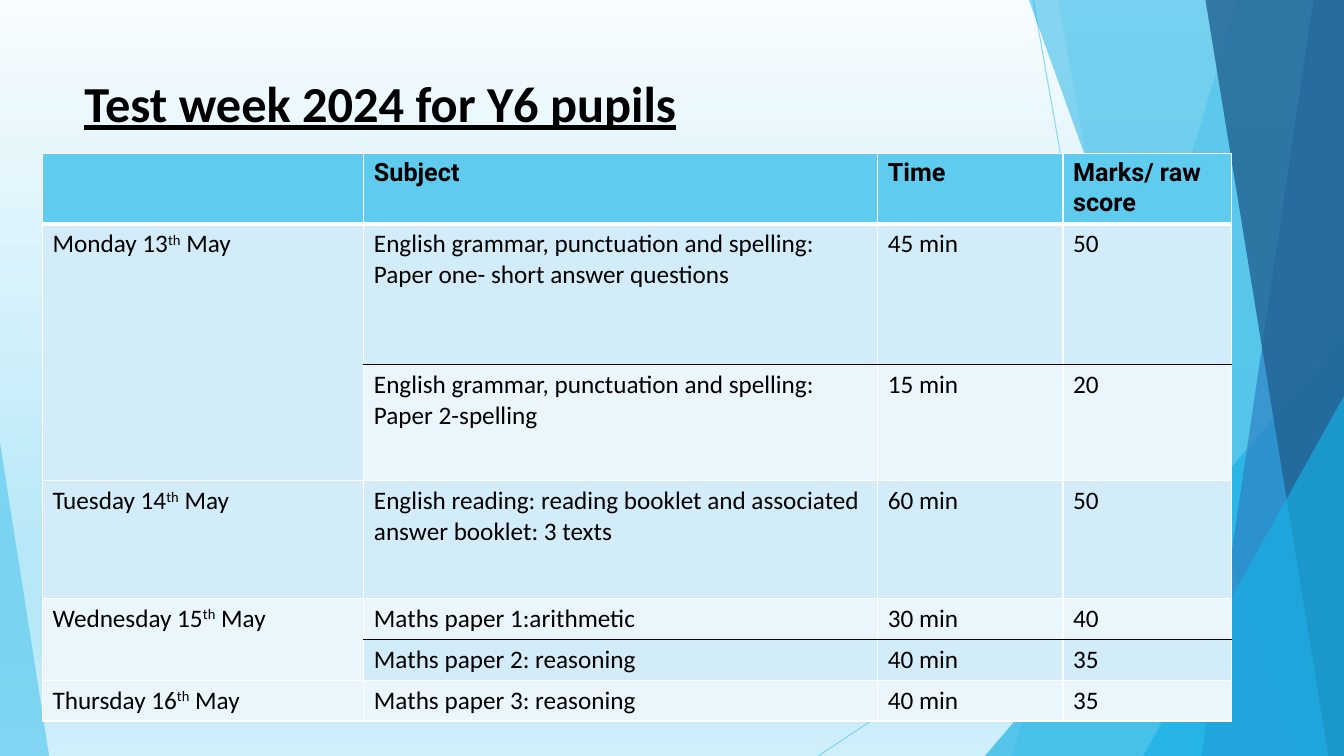
from dataclasses import dataclass
from copy import deepcopy

from lxml import etree
from pptx import Presentation
from pptx import util as u
from pptx.dml.color import RGBColor
from pptx.enum import shapes, text
from pptx.oxml import ns

BLACK = RGBColor(0x00, 0x00, 0x00)
WHITE = RGBColor(0xFF, 0xFF, 0xFF)
SKY = RGBColor(0x5F, 0xCB, 0xEF)
CYAN = RGBColor(0x17, 0xB0, 0xE4)
BLUE = RGBColor(0x2E, 0x83, 0xC3)
NAVY = RGBColor(0x22, 0x62, 0x92)
BAND_DARK = RGBColor(0xD2, 0xEC, 0xF9)
BAND_LIGHT = RGBColor(0xEA, 0xF6, 0xFC)
BACKDROP = [
    (0, RGBColor(0xF7, 0xFC, 0xFE)),
    (0.74, RGBColor(0xB7, 0xE8, 0xF8)),
    (0.83, RGBColor(0xB7, 0xE8, 0xF8)),
    (1, RGBColor(0xCF, 0xEF, 0xFA)),
]
WIDTH, HEIGHT = 33.87, 19.05  # slide size in cm


@dataclass
class Ray:
    start: tuple[float, float]
    end: tuple[float, float]


@dataclass
class Shard:
    """A band from its slanted left edge to the right side of the slide."""
    top_x: float
    bottom_x: float
    color: RGBColor
    opacity: int


@dataclass
class Corner:
    """A right-angled triangle standing on the bottom of the slide."""
    left: float
    top: float
    width: float
    apex: float
    color: RGBColor
    opacity: int


@dataclass
class Paper:
    day: str
    subject: str
    time: str
    marks: str


RAYS = [Ray((26.04, 0), (29.41, HEIGHT)), Ray((WIDTH, 10.24), (20.62, HEIGHT))]
DECOR = [
    Shard(31.19, 25.5, SKY, 36),
    Shard(26.67, 30.05, SKY, 20),
    Corner(24.82, 8.46, 9.05, 1, CYAN, 66),
    Shard(25.93, 32.79, CYAN, 50),
    Shard(33.1, 30.28, BLUE, 70),
    Shard(30.38, 33.48, NAVY, 80),
    Corner(28.81, 9.98, 5.06, 1, CYAN, 66),
    Corner(0, 11.15, 1.24, 0, SKY, 70),
]

# Text between carets is superscript; an empty day continues the one above
HEADER = Paper("", "Subject", "Time", "Marks/ raw score")
GRAMMAR = "English grammar, punctuation and spelling: "
PAPERS = [
    Paper("Monday 13^th^ May", GRAMMAR + "Paper one- short answer questions", "45 min", "50"),
    Paper("", GRAMMAR + "Paper 2-spelling", "15 min", "20"),
    Paper("Tuesday 14^th^ May",
          "English reading: reading booklet and associated answer booklet: 3 texts",
          "60 min", "50"),
    Paper("Wednesday 15^th^ May", "Maths paper 1:arithmetic", "30 min", "40"),
    Paper("", "Maths paper 2: reasoning", "40 min", "35"),
    Paper("Thursday 16^th^ May", "Maths paper 3: reasoning", "40 min", "35"),
]
COLUMN_WIDTHS = [8.1, 12.95, 4.67, 4.24]
ROW_HEIGHTS = [1.74, 3.54, 2.93, 2.97, 1.03, 1.03, 1.03]


def set_opacity(element, percent: int) -> None:
    color = element.find(".//" + ns.qn("a:srgbClr"))
    etree.SubElement(color, ns.qn("a:alpha"), val=str(percent * 1000))


def write(frame, words: str, *, size: float = 18, font: str = "Calibri",
          bold: bool = False, underline: bool = False) -> None:
    paragraph = frame.paragraphs[0]
    paragraph.alignment = text.PP_ALIGN.LEFT
    for index, part in enumerate(words.split("^")):
        run = paragraph.add_run()
        run.text = part
        run.font.size = u.Pt(size)
        run.font.name = font
        run.font.bold = bold
        run.font.underline = underline
        run.font.color.rgb = BLACK
        if index % 2:
            run.font._element.set("baseline", "30000")


def paint_backdrop(slide) -> None:
    fill = slide.background.fill
    fill.gradient()
    fill.gradient_angle = 270
    stop_list = slide._element.find(".//" + ns.qn("a:gsLst"))
    while len(stop_list) < len(BACKDROP):
        stop_list.append(deepcopy(stop_list[0]))
    for stop, (position, color) in zip(fill.gradient_stops, BACKDROP):
        stop.position = position
        stop.color.rgb = color


def draw_ray(slide, ray: Ray) -> None:
    line = slide.shapes.add_connector(
        shapes.MSO_CONNECTOR.STRAIGHT, *map(u.Cm, ray.start + ray.end))
    line.line.color.rgb = SKY
    line.line.width = u.Pt(0.75)
    properties = line._element.spPr
    set_opacity(properties, 70)
    etree.SubElement(properties, ns.qn("a:effectLst"))


def draw_decor(slide, piece: Shard | Corner) -> None:
    if isinstance(piece, Shard):
        builder = slide.shapes.build_freeform(u.Cm(piece.top_x), 0)
        corners = [(WIDTH, 0), (WIDTH, HEIGHT), (piece.bottom_x, HEIGHT)]
        builder.add_line_segments([(u.Cm(x), u.Cm(y)) for x, y in corners])
        shape = builder.convert_to_shape()
    else:
        shape = slide.shapes.add_shape(
            shapes.MSO_SHAPE.ISOSCELES_TRIANGLE, u.Cm(piece.left), u.Cm(piece.top),
            u.Cm(piece.width), u.Cm(HEIGHT - piece.top))
        shape.adjustments[0] = piece.apex
    shape.shadow.inherit = False
    shape.fill.solid()
    shape.fill.fore_color.rgb = piece.color
    shape.line.fill.background()
    set_opacity(shape._element.spPr, piece.opacity)


def edge_style(edge: int, column: int) -> tuple[RGBColor, float]:
    """Style of a horizontal rule; edge 0 is the top of the table."""
    if edge == 1:
        return WHITE, 3
    same_day = 1 < edge <= len(PAPERS) and not PAPERS[edge - 1].day
    return (BLACK if same_day and column else WHITE), 1


def set_borders(cell, top: tuple, bottom: tuple) -> None:
    properties = cell._tc.get_or_add_tcPr()
    sides = {"lnL": (WHITE, 1), "lnR": (WHITE, 1), "lnT": top, "lnB": bottom}
    for index, (tag, (color, points)) in enumerate(sides.items()):
        line = etree.Element(ns.qn("a:" + tag), w=str(u.Pt(points)))
        fill = etree.SubElement(line, ns.qn("a:solidFill"))
        etree.SubElement(fill, ns.qn("a:srgbClr"), val=str(color))
        properties.insert(index, line)


def draw_timetable(slide) -> None:
    table = slide.shapes.add_table(
        len(ROW_HEIGHTS), len(COLUMN_WIDTHS), u.Cm(1.07), u.Cm(3.86),
        u.Cm(sum(COLUMN_WIDTHS)), u.Cm(sum(ROW_HEIGHTS))).table
    table.horz_banding = False
    for column, width in zip(table.columns, COLUMN_WIDTHS):
        column.width = u.Cm(width)
    for row, height in zip(table.rows, ROW_HEIGHTS):
        row.height = u.Cm(height)

    for r, paper in enumerate([HEADER, *PAPERS]):
        band = SKY if r == 0 else BAND_DARK if r % 2 else BAND_LIGHT
        for c, words in enumerate([paper.day, paper.subject, paper.time, paper.marks]):
            cell = table.cell(r, c)
            cell.fill.solid()
            cell.fill.fore_color.rgb = band
            set_borders(cell, edge_style(r, c), edge_style(r + 1, c))
            if words:
                write(cell.text_frame, words, bold=r == 0,
                      font="Calibri" if r else "Roboto")
        if r and not paper.day:
            table.cell(r - 1, 0).merge(table.cell(r, 0))


def main() -> None:
    deck = Presentation()
    deck.slide_width, deck.slide_height = u.Cm(WIDTH), u.Cm(HEIGHT)
    slide = deck.slides.add_slide(deck.slide_layouts[6])

    # Background and slanted decoration
    paint_backdrop(slide)
    for ray in RAYS:
        draw_ray(slide, ray)
    for piece in DECOR:
        draw_decor(slide, piece)

    # Title
    title = slide.shapes.add_textbox(u.Cm(1.88), u.Cm(1.7), u.Cm(23.88), u.Cm(3.66))
    title.text_frame.word_wrap = True
    title.text_frame.vertical_anchor = text.MSO_ANCHOR.TOP
    write(title.text_frame, "Test week 2024 for Y6 pupils", size=36, bold=True, underline=True)

    # Test timetable
    draw_timetable(slide)
    deck.save("out.pptx")


if __name__ == "__main__":
    main()
